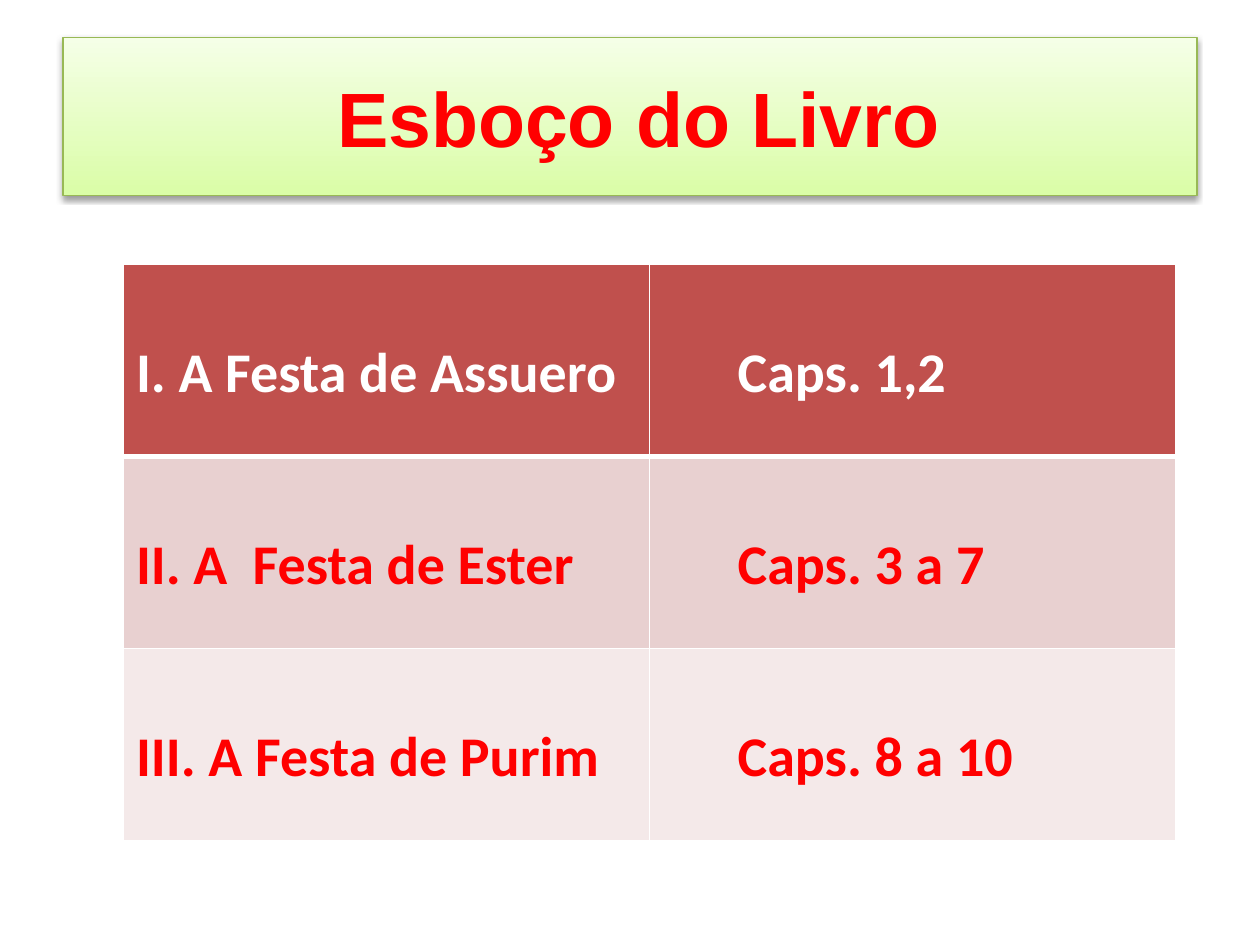
from dataclasses import dataclass

from lxml.etree import SubElement
from pptx import Presentation
from pptx.dml.color import RGBColor
from pptx.enum.shapes import MSO_SHAPE
from pptx.enum.text import MSO_ANCHOR, PP_ALIGN
from pptx.oxml.ns import qn
from pptx.util import Inches, Pt


@dataclass(frozen=True)
class Theme:
    title_font: str = "Arial"
    body_font: str = "Calibri"
    title_size: int = 44
    body_size: int = 32
    red: str = "FF0000"
    white: str = "FFFFFF"
    title_line: str = "98B955"
    title_gradient: tuple = ("DAFDA7", "F5FFE7")
    row_fills: tuple = ("C0504D", "E8D0D0", "F4E9E9")
    shadow: str = "000000"


THEME = Theme()
OUTLINE = [
    ("I. A Festa de Assuero", "Caps. 1,2"),
    ("II. A  Festa de Ester", "Caps. 3 a 7"),
    ("III. A Festa de Purim", "Caps. 8 a 10"),
]


def rgb(value):
    return RGBColor.from_string(value)


def set_font(paragraph, name, size, color):
    font = paragraph.font
    font.name, font.size, font.bold = name, Pt(size), True
    font.color.rgb = rgb(color)


def add_shadow(shape):
    shape.shadow.inherit = False
    effects = shape._element.spPr.find(qn("a:effectLst"))
    shadow = SubElement(effects, qn("a:outerShdw"), blurRad=str(Pt(3.1)),
                        dist=str(Pt(1.6)), dir="5400000", rotWithShape="0")
    color = SubElement(shadow, qn("a:srgbClr"), val=THEME.shadow)
    SubElement(color, qn("a:alpha"), val="38000")


def add_title(slide, text):
    shape = slide.shapes.add_shape(MSO_SHAPE.RECTANGLE, Inches(0.5), Inches(0.3),
                                   Inches(9), Inches(1.25))
    shape.fill.gradient()
    shape.fill.gradient_angle = 90
    for stop, color in zip(shape.fill.gradient_stops, THEME.title_gradient):
        stop.color.rgb = rgb(color)
    shape.line.color.rgb = rgb(THEME.title_line)
    shape.line.width = Pt(0.75)
    add_shadow(shape)

    frame = shape.text_frame
    frame.word_wrap = True
    frame.vertical_anchor = MSO_ANCHOR.MIDDLE
    frame.margin_left = Inches(0.24)
    paragraph = frame.paragraphs[0]
    paragraph.text = text
    paragraph.alignment = PP_ALIGN.CENTER
    set_font(paragraph, THEME.title_font, THEME.title_size, THEME.red)


def set_borders(cell, **widths):
    """Draw white borders; widths are in points, keyed L, R, T and B."""
    properties = cell._tc.get_or_add_tcPr()
    for side, width in widths.items():
        line = SubElement(properties, qn(f"a:ln{side}"), w=str(Pt(width)))
        fill = SubElement(line, qn("a:solidFill"))
        SubElement(fill, qn("a:srgbClr"), val=THEME.white)


def add_outline_table(slide, rows):
    table = slide.shapes.add_table(len(rows), 2, Inches(0.98), Inches(2.1),
                                   Inches(8.35), Inches(4.57)).table
    for row_index, texts in enumerate(rows):
        is_header = row_index == 0
        for column_index, text in enumerate(texts):
            cell = table.cell(row_index, column_index)
            set_borders(cell, L=1, R=1, T=3 if row_index == 1 else 1,
                        B=3 if is_header else 1)
            cell.fill.solid()
            cell.fill.fore_color.rgb = rgb(THEME.row_fills[row_index])
            cell.margin_top = Inches(0.59)
            cell.margin_left = Inches((0.1, 0.7)[column_index])
            cell.text = text
            set_font(cell.text_frame.paragraphs[0], THEME.body_font, THEME.body_size,
                     THEME.white if is_header else THEME.red)


def main():
    presentation = Presentation()
    presentation.slide_width, presentation.slide_height = Inches(10), Inches(7.5)
    slide = presentation.slides.add_slide(presentation.slide_layouts[6])
    add_title(slide, "Esboço do Livro")
    add_outline_table(slide, OUTLINE)
    presentation.save("out.pptx")


if __name__ == "__main__":
    main()
